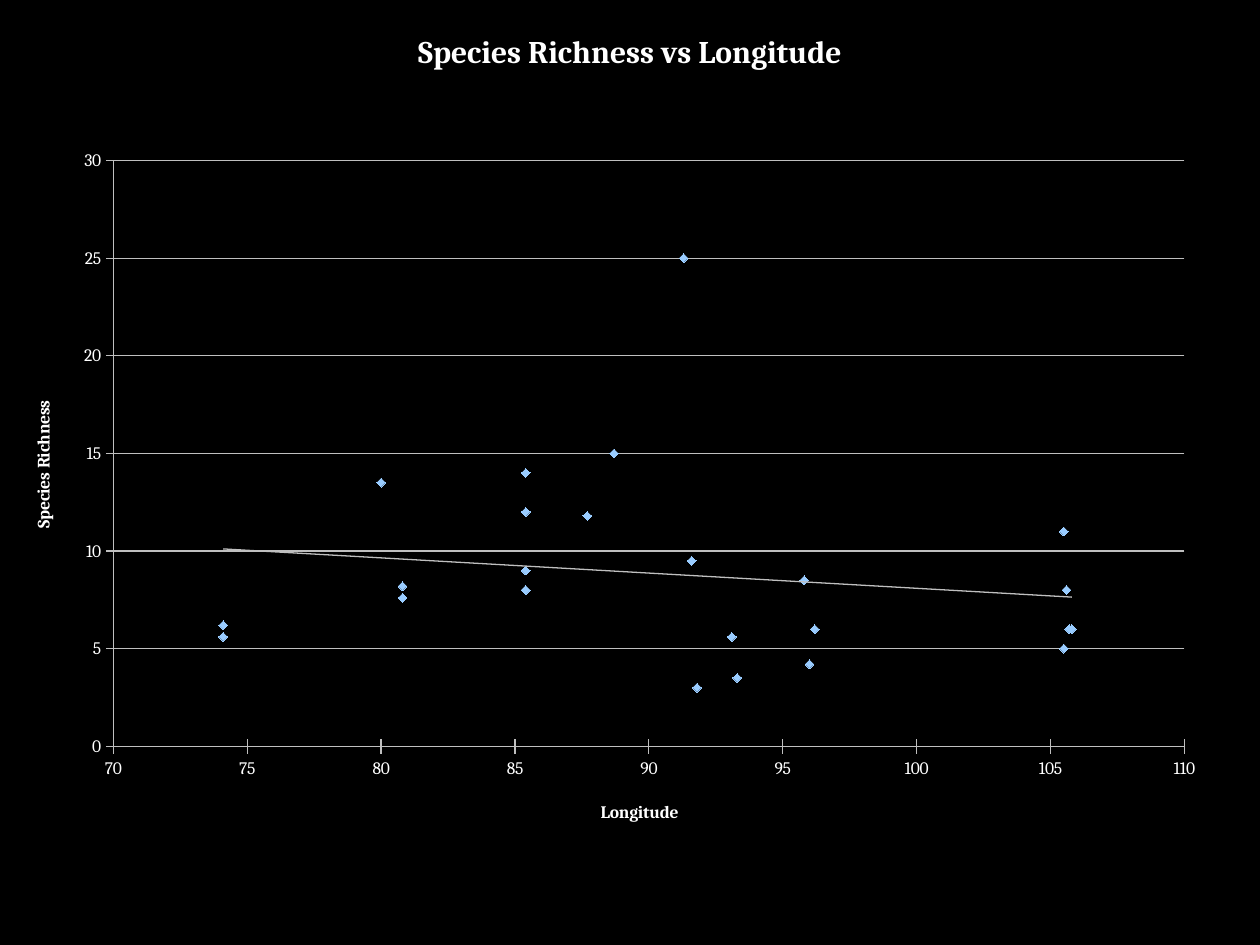
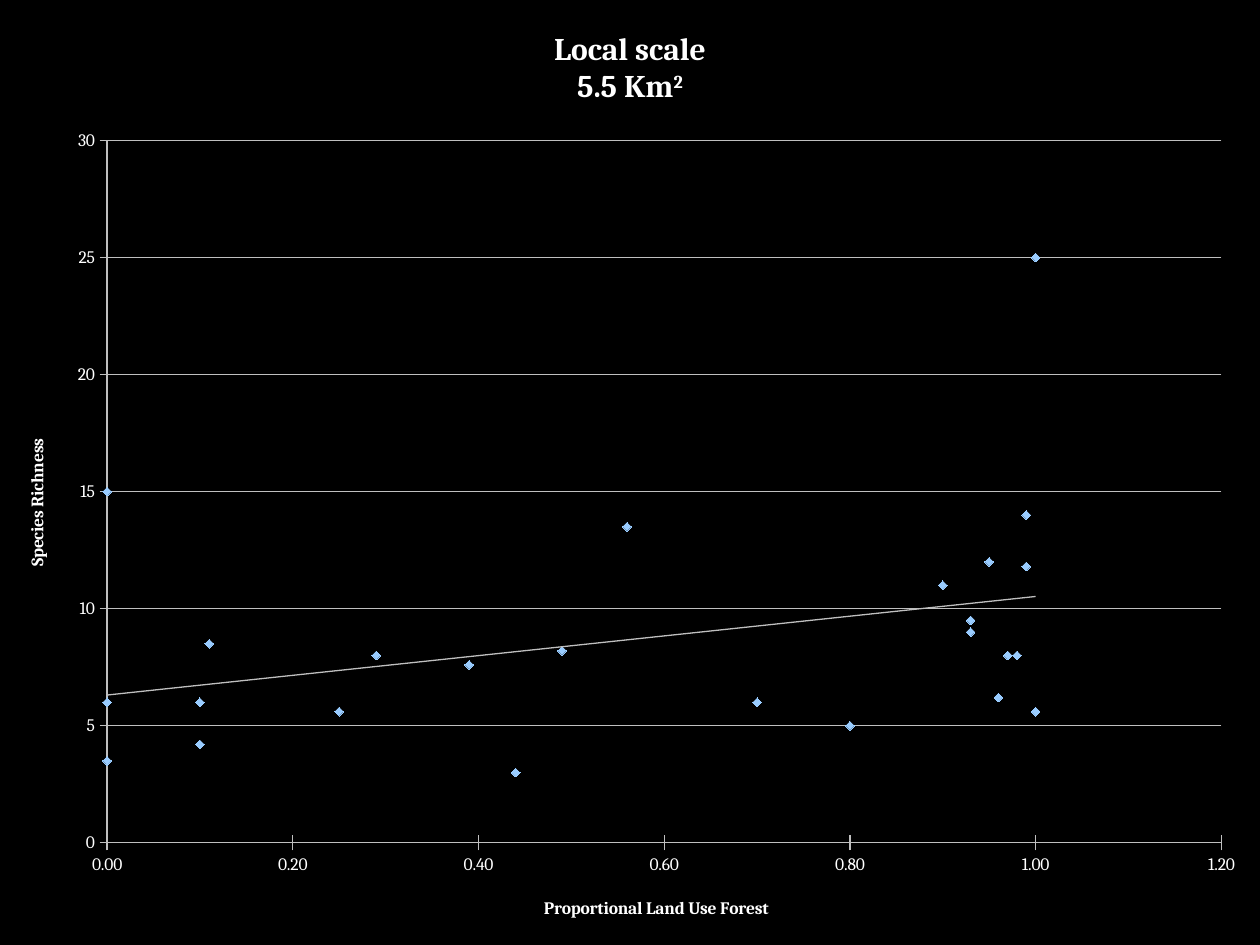
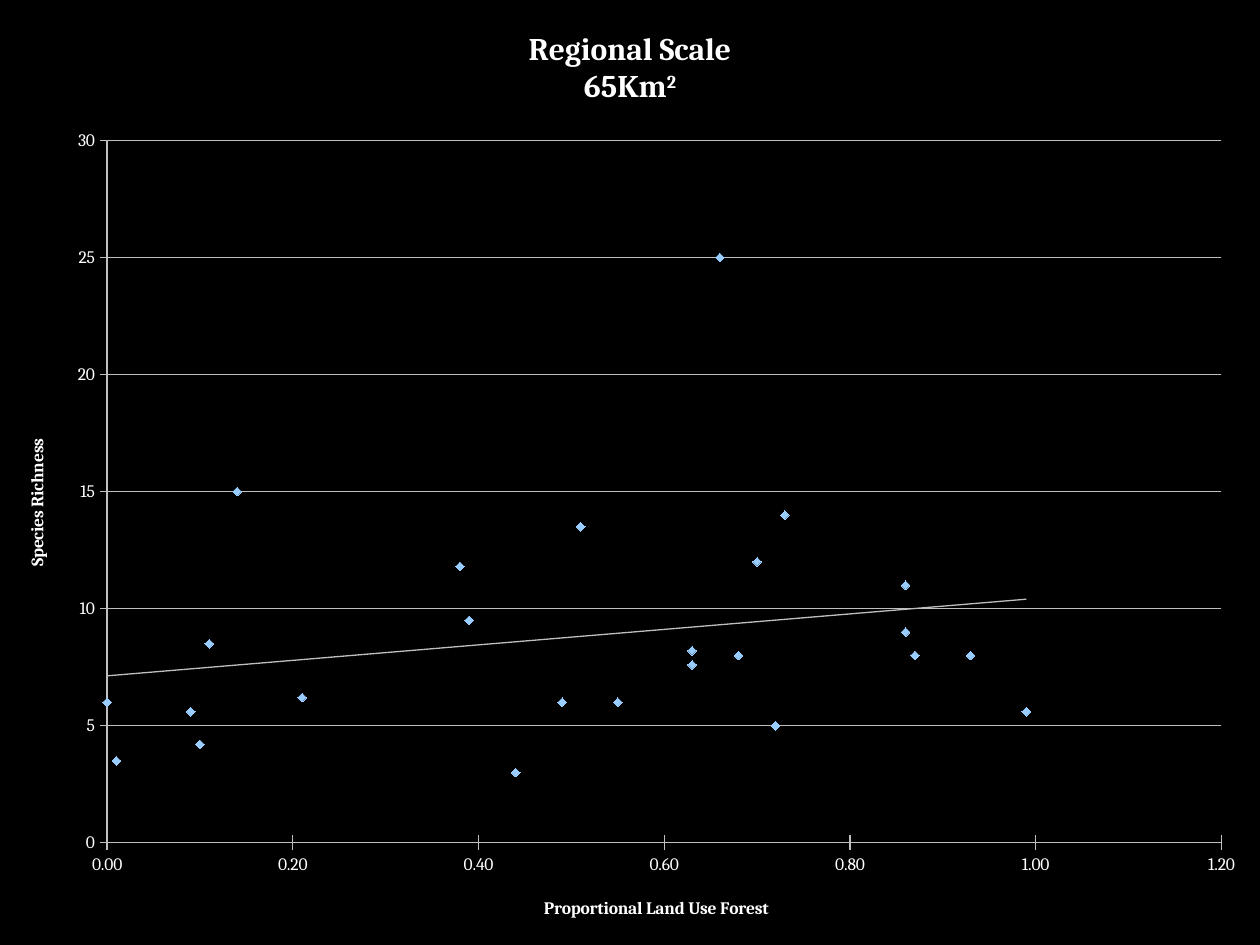
from lxml import etree
from pptx import Presentation
from pptx.chart.data import XyChartData
from pptx.dml.color import RGBColor
from pptx.enum.chart import XL_CHART_TYPE, XL_MARKER_STYLE, XL_TICK_MARK
from pptx.oxml import parse_xml
from pptx.oxml.ns import nsdecls, qn
from pptx.util import Pt

SCATTER = XL_CHART_TYPE.XY_SCATTER
DIAMOND = XL_MARKER_STYLE.DIAMOND
CROSS = XL_TICK_MARK.CROSS

SLIDE_WIDTH, SLIDE_HEIGHT = Pt(720), Pt(540)
BLACK, WHITE, GRAY, LIGHT_BLUE = "000000", "FFFFFF", "BFBFBF", "99CCFF"
FONT = "Cambria"
LINE_WIDTH = 0.75
TITLE_FORMAT = {"name": FONT, "size": Pt(18), "bold": True}
AXIS_TITLE_FORMAT = {"name": FONT, "size": Pt(10), "bold": True}
LABEL_FORMAT = {"name": FONT, "size": Pt(10), "bold": False}

RICHNESS = [25, 5.6, 11.8, 3, 15, 12, 8, 9, 14, 8, 6.2, 5.6, 13.5, 7.6, 8.2,
            9.5, 6, 8.5, 3.5, 4.2, 8, 6, 11, 6, 5]
LONGITUDE = [91.3, 93.1, 87.7, 91.8, 88.7, 85.4, 85.4, 85.4, 85.4, 85.4, 74.1,
             74.1, 80, 80.8, 80.8, 91.6, 96.2, 95.8, 93.3, 96, 105.6, 105.8,
             105.5, 105.7, 105.5]
LOCAL_FOREST = [1, 1, 0.99, 0.44, 0, 0.95, 0.98, 0.93, 0.99, 0.97, 0.96, 0.25,
                0.56, 0.39, 0.49, 0.93, 0, 0.11, 0, 0.1, 0.29, 0.7, 0.9, 0.1, 0.8]
REGIONAL_FOREST = [0.66, 0.99, 0.38, 0.44, 0.14, 0.7, 0.87, 0.86, 0.73, 0.93,
                   0.21, 0.09, 0.51, 0.63, 0.63, 0.39, 0, 0.11, 0.01, 0.1, 0.68,
                   0.55, 0.86, 0.49, 0.72]

LONGITUDE_AXIS = {"minimum_scale": 70, "maximum_scale": 110, "major_unit": 5}
FOREST_AXIS = {"minimum_scale": 0, "maximum_scale": 1.2, "major_unit": 0.2}
RICHNESS_AXIS = {"minimum_scale": 0, "maximum_scale": 30, "major_unit": 5}
LONGITUDE_PLOT = {"x": 0.09, "y": 0.17, "w": 0.85, "h": 0.62}


def color(hex_value):
    return RGBColor.from_string(hex_value)


def set_values(target, values):
    for name, value in values.items():
        setattr(target, name, value)


def style_font(font, values):
    set_values(font, values)
    font.color.rgb = color(WHITE)


def style_line(line):
    line.color.rgb = color(GRAY)
    line.width = Pt(LINE_WIDTH)


def write_title(text_frame, lines, values):
    for index, line in enumerate(lines):
        paragraph = text_frame.add_paragraph() if index else text_frame.paragraphs[0]
        style_font(paragraph.font, values)
        base, *superscripts = line.split("^")
        for position, text in enumerate([base, *superscripts]):
            run = paragraph.add_run()
            run.text = text
            style_font(run.font, values)
            if position:
                run._r.get_or_add_rPr().set("baseline", "30000")


def style_axis(axis, title, scale, number_format):
    set_values(axis, scale)
    axis.major_tick_mark = CROSS
    style_line(axis.format.line)
    style_font(axis.tick_labels.font, LABEL_FORMAT)
    set_values(axis.tick_labels, {"number_format": number_format,
                                  "number_format_is_linked": False})
    write_title(axis.axis_title.text_frame, [title], AXIS_TITLE_FORMAT)


def add_trend_line(series):
    trend_line = parse_xml(
        f'<c:trendline {nsdecls("c", "a")}><c:spPr><a:ln w="{Pt(LINE_WIDTH)}">'
        f'<a:solidFill><a:srgbClr val="{GRAY}"/></a:solidFill></a:ln></c:spPr>'
        '<c:trendlineType val="linear"/><c:dispRSqr val="0"/><c:dispEq val="0"/>'
        '</c:trendline>')
    series._element.find(qn("c:xVal")).addprevious(trend_line)


def style_points(series):
    series.format.line.fill.background()
    set_values(series.marker, {"style": DIAMOND, "size": 5})
    marker_format = series.marker.format
    marker_format.fill.solid()
    marker_format.fill.fore_color.rgb = color(LIGHT_BLUE)
    marker_format.line.color.rgb = color(LIGHT_BLUE)


def place_plot(chart, plot_box):
    plot_area = chart._chartSpace.chart.plotArea
    for automatic_layout in plot_area.findall(qn("c:layout")):
        plot_area.remove(automatic_layout)
    layout = etree.Element(qn("c:layout"))
    manual = etree.SubElement(layout, qn("c:manualLayout"))
    settings = {"layoutTarget": "inner", "xMode": "edge", "yMode": "edge", **plot_box}
    for name, value in settings.items():
        etree.SubElement(manual, qn(f"c:{name}")).set("val", str(value))
    plot_area.insert(0, layout)


def add_scatter_slide(presentation, title_lines, axis_title, positions, scale,
                      number_format, plot_box=None):
    slide = presentation.slides.add_slide(presentation.slide_layouts[6])
    slide.background.fill.solid()
    slide.background.fill.fore_color.rgb = color(BLACK)

    chart_data = XyChartData()
    data_series = chart_data.add_series("Series 1")
    for position, richness in zip(positions, RICHNESS):
        data_series.add_data_point(position, richness)
    chart = slide.shapes.add_chart(
        SCATTER, Pt(0), Pt(0), SLIDE_WIDTH, SLIDE_HEIGHT, chart_data).chart
    chart.has_legend = False
    style_font(chart.font, LABEL_FORMAT)
    write_title(chart.chart_title.text_frame, title_lines, TITLE_FORMAT)

    style_axis(chart.category_axis, axis_title, scale, number_format)
    style_axis(chart.value_axis, "Species Richness", RICHNESS_AXIS, "0")
    chart.category_axis.has_major_gridlines = False
    chart.value_axis.has_major_gridlines = True
    style_line(chart.value_axis.major_gridlines.format.line)

    chart.plots[0].vary_by_categories = False
    series = chart.plots[0].series[0]
    series.smooth = False
    style_points(series)
    add_trend_line(series)
    if plot_box:
        place_plot(chart, plot_box)


def main():
    presentation = Presentation()
    set_values(presentation, {"slide_width": SLIDE_WIDTH, "slide_height": SLIDE_HEIGHT})
    add_scatter_slide(presentation, ["Species Richness vs Longitude"], "Longitude",
                      LONGITUDE, LONGITUDE_AXIS, "0", LONGITUDE_PLOT)
    forest_slides = [(["Local scale", "5.5 Km^2"], LOCAL_FOREST),
                     (["Regional Scale", "65Km^2"], REGIONAL_FOREST)]
    for title_lines, positions in forest_slides:
        add_scatter_slide(presentation, title_lines, "Proportional Land Use Forest",
                          positions, FOREST_AXIS, "0.00")
    presentation.save("out.pptx")


if __name__ == "__main__":
    main()
